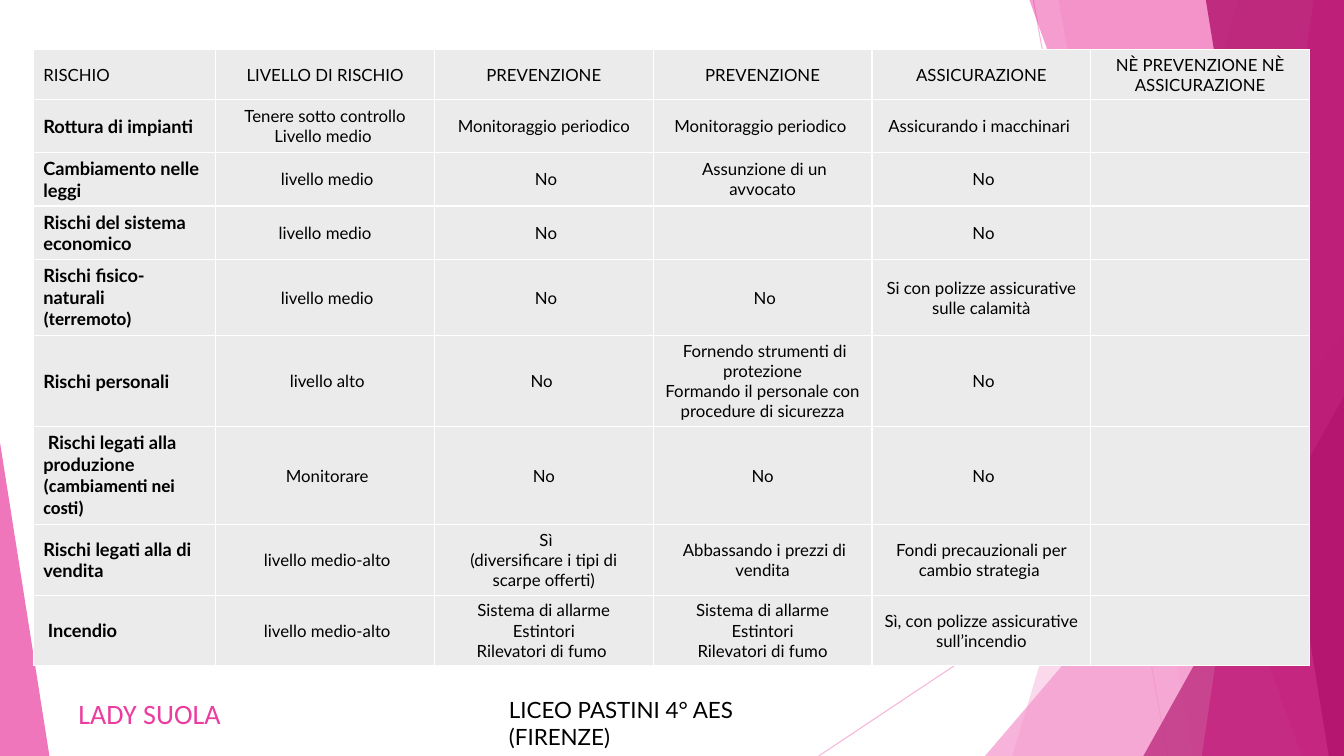
import pptx
import pptx.util
import pptx.dml.color
import pptx.enum.shapes
import pptx.enum.text
import pptx.oxml
import pptx.oxml.ns

Inches = pptx.util.Inches
Pt = pptx.util.Pt
SHAPE = pptx.enum.shapes.MSO_SHAPE
ALIGN = pptx.enum.text.PP_ALIGN
NS = pptx.oxml.ns.nsdecls("a")

WIDTH, HEIGHT = 13.33, 7.5
ROSE, PINK, MAGENTA = "F496CB", "EB3D9F", "B2136D"
BLACK, WHITE, CELL_GREY = "000000", "FFFFFF", "EBEBEB"

COLUMN_WIDTHS = [1.81] + [2.17] * 5
ROW_HEIGHTS = [0.5, 0.52, 0.53, 0.53, 0.75, 0.9, 0.97, 0.7, 0.69]
RISKS = [
    ["RISCHIO", "LIVELLO DI RISCHIO", "PREVENZIONE", "PREVENZIONE",
     "ASSICURAZIONE", "NÈ PREVENZIONE NÈ ASSICURAZIONE"],
    ["Rottura di impianti", "Tenere sotto controllo\nLivello medio ",
     "Monitoraggio periodico", "Monitoraggio periodico ",
     "Assicurando i macchinari ", ""],
    ["Cambiamento nelle leggi", " livello medio", " No",
     " Assunzione di un avvocato", " No", ""],
    ["Rischi del sistema economico", " livello medio ", " No", "", " No", ""],
    ["Rischi fisico-naturali\n(terremoto)", " livello medio", " No", " No",
     "Si con polizze assicurative sulle calamità", ""],
    ["Rischi personali", " livello alto", "No ",
     " Fornendo strumenti di protezione\n"
     "Formando il personale con procedure di sicurezza", " No", ""],
    [" Rischi legati alla produzione\n(cambiamenti nei costi)", " Monitorare",
     "No", "No", " No", ""],
    ["Rischi legati alla di vendita", " livello medio-alto",
     " Sì\n(diversificare i tipi di scarpe offerti)",
     " Abbassando i prezzi di vendita",
     "Fondi precauzionali per cambio strategia ", ""],
    [" Incendio", " livello medio-alto",
     "Sistema di allarme\nEstintori\nRilevatori di fumo ",
     "Sistema di allarme\nEstintori\nRilevatori di fumo",
     "Sì, con polizze assicurative sull’incendio", ""],
]

BODY = {"size": Pt(12), "name": "Lato", "bold": False}
RISK_NAME = {"size": Pt(13), "name": "Lato", "bold": True}
RISK_DETAIL = {"size": Pt(13), "name": "Calibri", "bold": True}
TEAM = {"size": Pt(20), "name": "Calibri"}
SCHOOL = {"size": Pt(16), "name": "Lato"}


def rgb(code):
    return pptx.dml.color.RGBColor.from_string(code)


def paint(fill, color, opacity=100):
    fill.solid()
    fill.fore_color.rgb = rgb(color)
    if opacity < 100:
        for color_node in fill._xPr.iter(pptx.oxml.ns.qn("a:srgbClr")):
            color_node.append(pptx.oxml.parse_xml(
                f'<a:alpha {NS} val="{opacity * 1000}"/>'))


def write(paragraph, text, style, color=BLACK):
    run = paragraph.add_run()
    run.text = text
    for attribute, value in style.items():
        setattr(run.font, attribute, value)
    run.font.color.rgb = rgb(color)


def finish_facet(facet, color, opacity):
    facet.shadow.inherit = False
    facet.line.fill.background()
    paint(facet.fill, color, opacity)


def add_ray(slide, start, end):
    ray = slide.shapes.add_connector(
        pptx.enum.shapes.MSO_CONNECTOR.STRAIGHT,
        *(Inches(value) for value in start + end))
    ray.line.width = Pt(0.75)
    paint(ray.line.fill, ROSE, 70)
    ray._element.spPr.append(pptx.oxml.parse_xml(f"<a:effectLst {NS}/>"))


def add_band(slide, box, top_x, bottom_x, color, opacity):
    """Slanted band that reaches the right edge of the box."""
    left, top, width, height = box
    right, bottom = left + width, top + height
    outline = [(top_x, top), (right, top), (right, bottom), (bottom_x, bottom)]
    points = [(Inches(x), Inches(y)) for x, y in outline]
    builder = slide.shapes.build_freeform(*points[0])
    builder.add_line_segments(points[1:], close=True)
    finish_facet(builder.convert_to_shape(), color, opacity)


def add_triangle(slide, box, apex, color, opacity):
    triangle = slide.shapes.add_shape(
        SHAPE.ISOSCELES_TRIANGLE, *(Inches(value) for value in box))
    triangle.adjustments[0] = apex
    finish_facet(triangle, color, opacity)


def add_facets(slide, box):
    left, top, width, height = box
    right, bottom = left + width, top + height

    def corner(base, rise):
        return right - base, bottom - rise, base, rise

    # Thin rays
    add_ray(slide, (10.25, top), (11.58, bottom))
    add_ray(slide, (right, 4.03), (8.12, bottom))
    # Right-hand bands and corner triangles, back to front
    add_band(slide, box, 12.28, 10.04, ROSE, 36)
    add_band(slide, box, 10.5, 11.83, ROSE, 20)
    add_triangle(slide, corner(3.56, 4.17), 1, ROSE, 72)
    add_band(slide, box, 10.21, 12.91, PINK, 50)
    add_band(slide, box, 13.03, 11.92, PINK, 70)
    add_band(slide, box, 11.96, 13.18, MAGENTA, 80)
    add_triangle(slide, corner(1.99, 3.57), 1, MAGENTA, 66)
    # Left-hand triangle
    add_triangle(slide, (left, bottom - 3.11, 0.49, 3.11), 0, PINK, 70)


def format_cell(cell):
    properties = cell._tc.get_or_add_tcPr()
    for side in ("lnL", "lnR", "lnT", "lnB"):
        properties.append(pptx.oxml.parse_xml(
            f'<a:{side} {NS} w="12700"><a:solidFill>'
            f'<a:srgbClr val="{WHITE}"/></a:solidFill></a:{side}>'))
    paint(cell.fill, CELL_GREY)
    cell.vertical_anchor = pptx.enum.text.MSO_ANCHOR.MIDDLE


def add_risk_table(slide, box):
    risks = slide.shapes.add_table(
        len(RISKS), len(COLUMN_WIDTHS), *(Inches(value) for value in box)).table
    risks.first_row = risks.horz_banding = False
    for column, width in zip(risks.columns, COLUMN_WIDTHS):
        column.width = Inches(width)
    for row, height in zip(risks.rows, ROW_HEIGHTS):
        row.height = Inches(height)
    for row_index, entries in enumerate(RISKS):
        for column_index, entry in enumerate(entries):
            cell = risks.cell(row_index, column_index)
            format_cell(cell)
            if not entry:
                continue
            for line_index, line in enumerate(entry.split("\n")):
                frame = cell.text_frame
                paragraph = frame.add_paragraph() if line_index else frame.paragraphs[0]
                style = BODY
                if column_index:
                    paragraph.alignment = ALIGN.CENTER
                elif row_index:
                    style = RISK_DETAIL if line_index else RISK_NAME
                write(paragraph, line, style)


def add_footer(slide, box):
    left, top, width, height = box
    labels = [
        (0, 2.39, "LADY SUOLA", TEAM, PINK),
        (width - 3.43, 3.43, "LICEO PASTINI 4° AES (FIRENZE)", SCHOOL, BLACK),
    ]
    for offset, label_width, text, style, color in labels:
        label = slide.shapes.add_textbox(
            Inches(left + offset), Inches(top), Inches(label_width), Inches(height))
        label.text_frame.word_wrap = True
        write(label.text_frame.paragraphs[0], text, style, color)


def main():
    deck = pptx.Presentation()
    deck.slide_width, deck.slide_height = Inches(WIDTH), Inches(HEIGHT)
    slide = deck.slides.add_slide(deck.slide_layouts[6])
    paint(slide.background.fill, WHITE)
    add_facets(slide, (0, 0, WIDTH, HEIGHT))
    add_risk_table(slide, (0.33, 0.49, sum(COLUMN_WIDTHS), sum(ROW_HEIGHTS)))
    add_footer(slide, (0.68, 6.86, 7.7, 0.52))
    deck.save("out.pptx")


if __name__ == "__main__":
    main()
